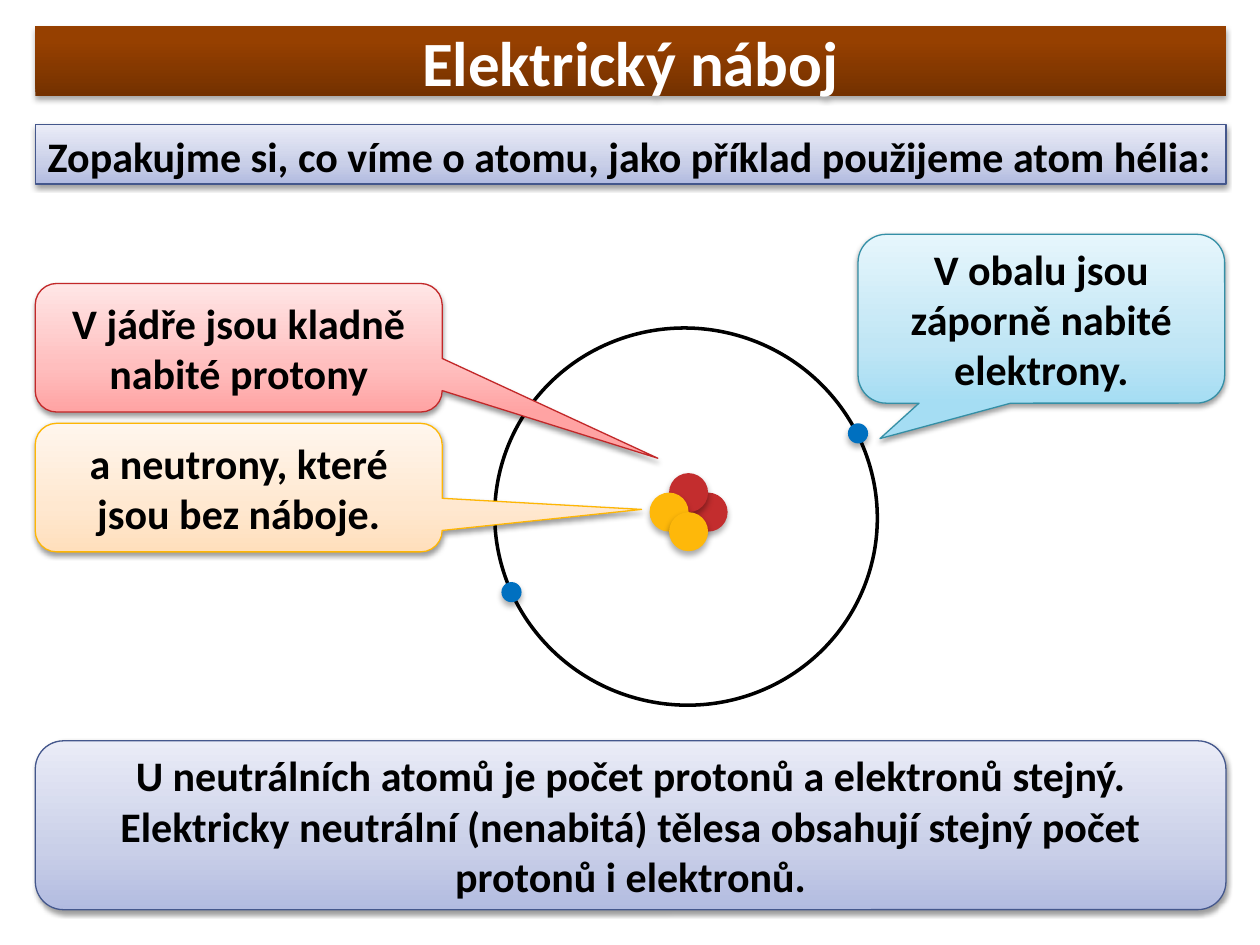
import pptx
import pptx.util
import pptx.dml.color
import pptx.enum.shapes
import pptx.enum.text
import pptx.oxml.ns
import lxml.etree

Inches = pptx.util.Inches
SHAPES = pptx.enum.shapes.MSO_SHAPE
ANCHOR = pptx.enum.text.MSO_ANCHOR
ALIGN = pptx.enum.text.PP_ALIGN

LEFT, FULL_WIDTH = 0.28, 9.45
COLORS = {
    "text": "000000", "title": "FFFFFF", "orbit": "000000", "shadow": "000000",
    "proton": "C32D2E", "neutron": "FEB80A", "electron": "0070C0",
}
GRADIENTS = {
    "brown": {0: "743100", 80: "964000", 100: "974100"},
    "violet": {0: "B2BBE0", 35: "C9CFE8", 100: "EAECF7"},
    "blue": {0: "A5DDF3", 35: "C1E6F5", 100: "E6F6FC"},
    "red": {0: "FFA3A3", 35: "FFBEBE", 100: "FFE6E6"},
    "orange": {0: "FFDFBC", 35: "FFE8D0", 100: "FFF6ED"},
}
BORDERS = {"violet": "44578C", "blue": "348FA6", "red": "C22829", "orange": "FEB604"}
SHADOWS = {"title": (35, 3.1, 1.8), "panel": (38, 3.1, 1.6), "particle": (32, 3.5, 2.2)}


def rgb(value):
    """Turn a hex string into a colour."""
    return pptx.dml.color.RGBColor.from_string(value)


def set_attributes(target, values):
    """Set every attribute named in a dict."""
    for name, value in values.items():
        setattr(target, name, value)


def add_element(parent, tag, **attributes):
    """Append a DrawingML child element."""
    return lxml.etree.SubElement(
        parent, pptx.oxml.ns.qn(tag), {name: str(value) for name, value in attributes.items()})


def add_color(parent, value):
    """Append an RGB colour element."""
    return add_element(parent, "a:srgbClr", val=value)


def set_shadow(shape, kind):
    """Give a shape a soft shadow falling straight down."""
    opacity, blur, distance = SHADOWS[kind]
    shape.shadow.inherit = False
    effects = shape._element.spPr.find(pptx.oxml.ns.qn("a:effectLst"))
    shadow = add_element(effects, "a:outerShdw", blurRad=pptx.util.Pt(blur),
                         dist=pptx.util.Pt(distance), dir=5400000, rotWithShape=0)
    add_element(add_color(shadow, COLORS["shadow"]), "a:alpha", val=opacity * 1000)


def set_gradient(shape, name):
    """Fill a shape with a gradient rising from its bottom edge."""
    shape.fill.gradient()
    shape.fill.gradient_angle = 90
    stops = next(shape._element.spPr.iter(pptx.oxml.ns.qn("a:gsLst")))
    for stop in list(stops):
        stops.remove(stop)
    for position, color in GRADIENTS[name].items():
        add_color(add_element(stops, "a:gs", pos=position * 1000), color)


def set_text(shape, text, size=24, color="text", align=ALIGN.CENTER, anchor=ANCHOR.MIDDLE):
    """Write bold text into a shape."""
    frame = shape.text_frame
    frame.text = text
    set_attributes(frame, {"word_wrap": True, "vertical_anchor": anchor,
                           "auto_size": pptx.enum.text.MSO_AUTO_SIZE.NONE})
    paragraph = frame.paragraphs[0]
    paragraph.alignment = align
    font = paragraph.runs[0].font
    set_attributes(font, {"name": "Calibri", "size": pptx.util.Pt(size), "bold": True})
    font.color.rgb = rgb(COLORS[color])


def set_title(slide, text):
    """Place and format the title bar."""
    title = slide.shapes.title
    set_attributes(title, {"left": Inches(LEFT), "top": Inches(0.21),
                           "width": Inches(FULL_WIDTH), "height": Inches(0.55)})
    set_gradient(title, "brown")
    set_shadow(title, "title")
    set_text(title, text, size=36, color="title")


def add_panel(slide, kind, box, palette, text, adjustments=(), **text_format):
    """Add a shaded panel or callout with text."""
    shape = slide.shapes.add_shape(kind, *map(Inches, box))
    for index, value in enumerate(adjustments):
        shape.adjustments[index] = value
    set_gradient(shape, palette)
    shape.line.color.rgb = rgb(BORDERS[palette])
    shape.line.width = pptx.util.Pt(0.75)
    set_shadow(shape, "panel")
    set_text(shape, text, **text_format)


def add_particle(slide, kind, left, top, diameter):
    """Add one round particle."""
    shape = slide.shapes.add_shape(
        SHAPES.OVAL, *map(Inches, (left, top, diameter, diameter)))
    shape.fill.solid()
    shape.fill.fore_color.rgb = rgb(COLORS[kind])
    shape.line.fill.background()
    set_shadow(shape, "particle")


def add_orbit(slide):
    """Add the ring of the electron shell."""
    orbit = slide.shapes.add_shape(SHAPES.OVAL, *map(Inches, (3.95, 2.58, 2.99, 3.04)))
    orbit.rotation = 285.3
    orbit.fill.background()
    orbit.line.color.rgb = rgb(COLORS["orbit"])
    orbit.line.width = pptx.util.Pt(2)
    orbit.shadow.inherit = False


def add_atom(slide):
    """Draw the helium nucleus, its shell and its electrons."""
    diameter = 0.31
    nucleus = [("proton", 1, 0), ("proton", 0, -1), ("neutron", -1, 0), ("neutron", 0, 1)]
    for kind, column, row in nucleus:
        add_particle(slide, kind, 5.31 + column * diameter / 2,
                     3.91 + row * diameter / 2, diameter)
    add_orbit(slide)
    for left, top in [(6.73, 3.36), (3.98, 4.62)]:
        add_particle(slide, "electron", left, top, 0.16)


def main():
    """Build the slide about electric charge."""
    presentation = pptx.Presentation()
    set_attributes(presentation, {"slide_width": Inches(10), "slide_height": Inches(7.5)})
    slide = presentation.slides.add_slide(presentation.slide_layouts[5])
    set_title(slide, "Elektrický náboj")
    add_panel(slide, SHAPES.RECTANGLE, (LEFT, 0.99, FULL_WIDTH, 0.47), "violet",
              "Zopakujme si, co víme o atomu, jako příklad použijeme atom hélia:",
              align=ALIGN.LEFT, anchor=ANCHOR.TOP)
    add_atom(slide)
    callouts = [
        ((6.81, 1.86, 2.91, 1.34), "blue", "V obalu jsou záporně nabité elektrony.", (-0.44, 0.71)),
        ((LEFT, 2.25, 3.23, 1.02), "red", "V jádře jsou kladně nabité protony", (1.03, 0.86)),
        ((LEFT, 3.36, 3.23, 1.02), "orange", "a neutrony, které jsou bez náboje.", (0.99, 0.17)),
    ]
    for box, palette, text, pointer in callouts:
        add_panel(slide, SHAPES.ROUNDED_RECTANGULAR_CALLOUT, box, palette, text, pointer)
    add_panel(slide, SHAPES.ROUNDED_RECTANGLE, (LEFT, 5.88, FULL_WIDTH, 1.34), "violet",
              "U neutrálních atomů je počet protonů a elektronů stejný. Elektricky neutrální "
              "(nenabitá) tělesa obsahují stejný počet protonů i elektronů.")
    presentation.save("out.pptx")


if __name__ == "__main__":
    main()
